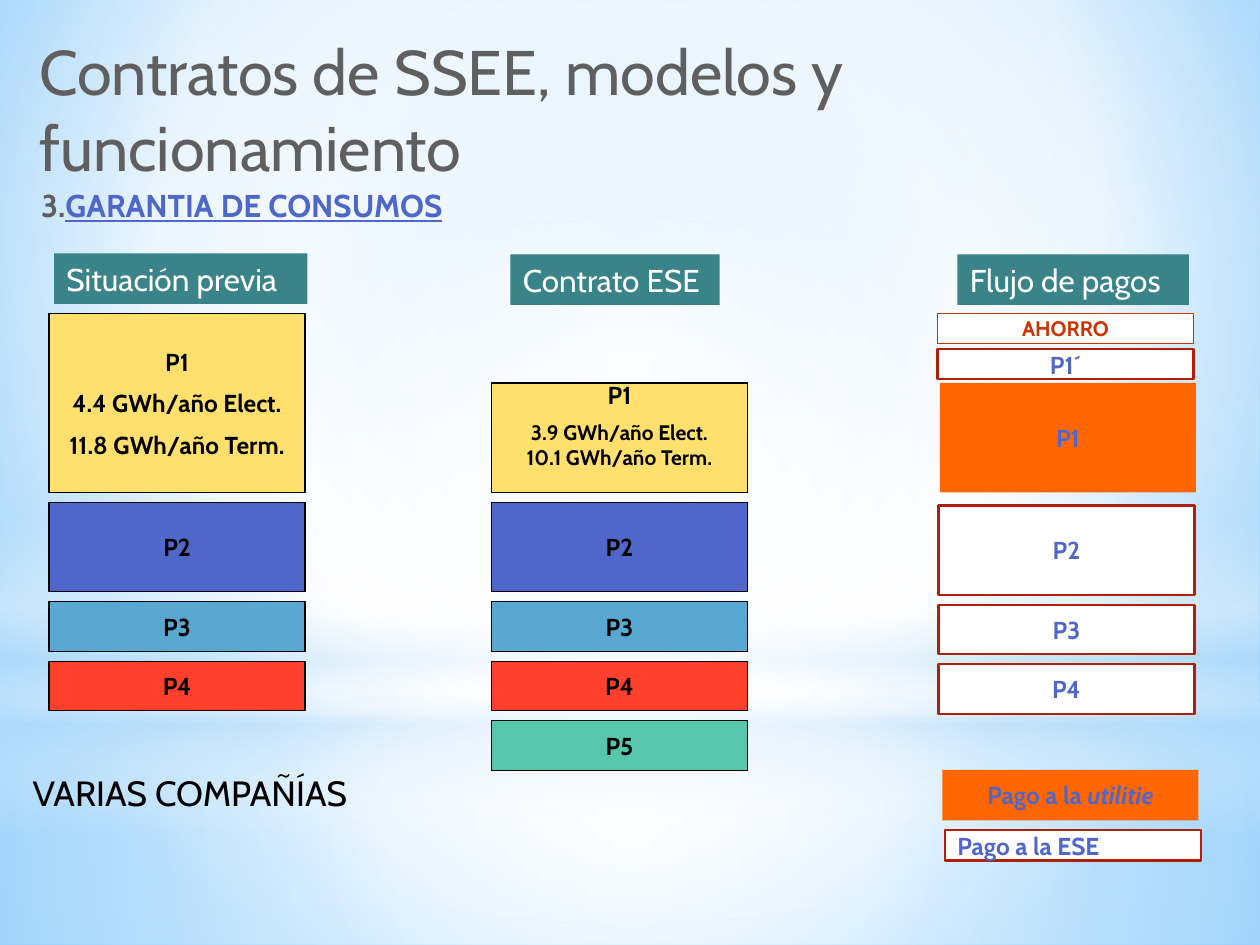
from dataclasses import dataclass
from typing import Optional

from lxml.etree import SubElement
from pptx import Presentation
from pptx.dml.color import RGBColor
from pptx.enum.shapes import MSO_SHAPE as Preset
from pptx.enum.text import MSO_ANCHOR as Anchor, MSO_AUTO_SIZE as AutoSize, PP_ALIGN as Align
from pptx.oxml.ns import qn
from pptx.util import Cm, Pt

FONT = "Cabin"
GAP = 0.2
BLOCK_WIDTH = 5.16
COLORS = {
    "black": "000000", "white": "FFFFFF", "grey": "5F5F5F", "teal": "398389",
    "yellow": "FFE06F", "blue": "4E67C8", "sky": "59A8D1", "red": "FF402A",
    "green": "56C7AA", "orange": "FF6600", "brick": "B01F07", "rust": "CC3300",
    "haze": "B4DCFA", "bg_light": "9ED5FF", "bg_deep": "5BB9FF",
}


@dataclass
class Style:
    fill: Optional[str] = None
    line: Optional[str] = None
    line_width: float = 0.75
    text: str = "black"
    size: int = 14
    bold: bool = True
    align: Align = Align.CENTER


@dataclass
class Block:
    lines: list[str]
    height: float
    style: Style


@dataclass
class Backdrop:
    preset: Preset
    top: float
    height: float
    stops: list[tuple[int, str, int]]
    angle: Optional[int] = None


def rgb(name: str) -> RGBColor:
    return RGBColor.from_string(COLORS[name])


def set_gradient(fill, stops, angle=None, focus=(50, 50, 50, 50)) -> None:
    """Fill with (position, colour, opacity) stops, linear if an angle is given, else circular."""
    fill.gradient()
    grad = fill._fill._gradFill
    for child in list(grad):
        grad.remove(child)
    stop_list = SubElement(grad, qn("a:gsLst"))
    for position, color, opacity in stops:
        stop = SubElement(stop_list, qn("a:gs"), pos=str(position * 1000))
        value = SubElement(stop, qn("a:srgbClr"), val=COLORS[color])
        if opacity < 100:
            SubElement(value, qn("a:alpha"), val=str(opacity * 1000))
    if angle is None:
        circle = SubElement(grad, qn("a:path"), path="circle")
        SubElement(circle, qn("a:fillToRect"),
                   **{side: str(share * 1000) for side, share in zip("ltrb", focus)})
    else:
        SubElement(grad, qn("a:lin"), ang=str(angle * 60000), scaled="0")


def add_backdrop(slide, backdrop: Backdrop) -> None:
    shape = slide.shapes.add_shape(backdrop.preset, 0, Cm(backdrop.top),
                                   Cm(25.4), Cm(backdrop.height))
    shape.shadow.inherit = False
    shape.line.fill.background()
    set_gradient(shape.fill, backdrop.stops, backdrop.angle)


def format_paragraph(paragraph, style: Style) -> None:
    paragraph.alignment = style.align
    font = paragraph.font
    font.name, font.size, font.bold = FONT, Pt(style.size), style.bold
    font.color.rgb = rgb(style.text)


def add_box(slide, left: float, top: float, width: float, height: float,
            lines: list[str], style: Style, anchor: Anchor = Anchor.MIDDLE):
    """Draw a rectangle with one paragraph per line and return its text frame."""
    shape = slide.shapes.add_shape(Preset.RECTANGLE, Cm(left), Cm(top), Cm(width), Cm(height))
    shape.shadow.inherit = False
    shape.fill.solid()
    shape.fill.fore_color.rgb = rgb(style.fill)
    if style.line:
        shape.line.color.rgb = rgb(style.line)
        shape.line.width = Pt(style.line_width)
    else:
        shape.line.fill.background()
    frame = shape.text_frame
    frame.word_wrap = False
    frame.vertical_anchor = anchor
    for index, line in enumerate(lines):
        paragraph = frame.add_paragraph() if index else frame.paragraphs[0]
        paragraph.add_run().text = line
        format_paragraph(paragraph, style)
        if index:
            paragraph.space_before = Pt(7)
    return frame


def add_stack(slide, left: float, top: float, blocks: list[Block]) -> list:
    """Stack blocks downwards with an equal gap and return their text frames."""
    frames = []
    for block in blocks:
        frames.append(add_box(slide, left, top, BLOCK_WIDTH, block.height,
                              block.lines, block.style))
        top += block.height + GAP
    return frames


def add_label(slide, left: float, top: float, width: float, style: Style, wrap: bool):
    frame = slide.shapes.add_textbox(Cm(left), Cm(top), Cm(width), Cm(1.1)).text_frame
    frame.word_wrap = wrap
    format_paragraph(frame.paragraphs[0], style)
    return frame.paragraphs[0]


def cost(fill: str) -> Style:
    return Style(fill, "black")


ESE = Style("white", "brick", 1.25, "blue")
UTILITY = Style("orange", text="blue")
SAVING = Style("white", "rust", text="rust", size=12)
HEADING = Style("teal", text="white", size=18, bold=False, align=Align.LEFT)

SHARED_COSTS = [Block(["P2"], 1.8, cost("blue")), Block(["P3"], 1, cost("sky")),
                Block(["P4"], 1, cost("red"))]
BEFORE = [Block(["P1", "4.4 GWh/año Elect.", "11.8 GWh/año Term."], 3.61, cost("yellow")),
          *SHARED_COSTS]
CONTRACT = [Block(["P1", "3.9 GWh/año Elect.", "10.1 GWh/año Term."], 2.21, cost("yellow")),
            *SHARED_COSTS, Block(["P5"], 1, cost("green"))]
ESE_PAYMENTS = [Block(block.lines, block.height, ESE) for block in SHARED_COSTS]

BACKDROPS = [
    Backdrop(Preset.RECTANGLE, 14.17, 4.88,
             [(0, "white", 91), (37, "white", 76), (100, "haze", 79)]),
    Backdrop(Preset.RECTANGLE, 0, 14.17,
             [(0, "white", 89), (48, "white", 62), (100, "haze", 79)]),
    Backdrop(Preset.RECTANGLE, 10.46, 6.35,
             [(0, "white", 0), (29, "white", 30), (45, "haze", 40), (55, "white", 26),
              (65, "haze", 60), (100, "white", 0)], angle=90),
    Backdrop(Preset.OVAL, 4.45, 14.17, [(0, "white", 100), (56, "white", 0)]),
]


def add_title(slide) -> None:
    title = slide.shapes.title
    title.left, title.top, title.width, title.height = Cm(0.69), Cm(0.56), Cm(23.75), Cm(2.18)
    frame = title.text_frame
    frame.text = "Contratos de SSEE, modelos y funcionamiento"
    frame.margin_left = frame.margin_right = frame.margin_top = frame.margin_bottom = Cm(0.1)
    frame.word_wrap, frame.auto_size = True, AutoSize.NONE
    frame.vertical_anchor = Anchor.TOP
    format_paragraph(frame.paragraphs[0],
                     Style(text="grey", size=36, bold=False, align=Align.LEFT))
    slide.shapes.element.append(title.element)  # in front of the backdrops


def main() -> None:
    deck = Presentation()
    deck.slide_width, deck.slide_height = Cm(25.4), Cm(19.05)
    slide = deck.slides.add_slide(deck.slide_layouts[5])
    set_gradient(slide.background.fill,
                 [(0, "bg_light", 100), (60, "white", 100), (100, "bg_deep", 100)],
                 focus=(20, 10, 20, 60))
    for backdrop in BACKDROPS:
        add_backdrop(slide, backdrop)
    add_title(slide)

    section = add_label(slide, 0.58, 3.63, 23.8,
                        Style(text="grey", size=18, align=Align.LEFT), wrap=True)
    section.add_run().text = "3."
    section_name = section.add_run()
    section_name.text = "GARANTIA DE CONSUMOS"
    section_name.font.underline = True
    section_name.font.color.rgb = rgb("blue")

    for heading, left, top, width in [("Situación previa", 1.09, 5.11, 5.11),
                                      ("Contrato ESE", 10.29, 5.13, 4.22),
                                      ("Flujo de pagos", 19.3, 5.13, 4.67)]:
        add_box(slide, left, top, width, 1.02, [heading], HEADING, Anchor.TOP)

    add_stack(slide, 0.99, 6.32, BEFORE)
    contract_energy = add_stack(slide, 9.91, 7.72, CONTRACT)[0]
    contract_energy.margin_bottom = Cm(0.64)
    for consumption in contract_energy.paragraphs[1:]:
        consumption.font.size = Pt(12)
        consumption.space_before = Pt(0)
    contract_energy.paragraphs[1].line_spacing = 1.4

    add_stack(slide, 18.92, 10.19, ESE_PAYMENTS)
    add_box(slide, 18.9, 7.04, BLOCK_WIDTH, 0.61, ["P1´"], ESE)
    add_box(slide, 18.95, 7.72, BLOCK_WIDTH, 2.21, ["P1"], UTILITY)
    add_box(slide, 18.9, 6.32, BLOCK_WIDTH, 0.61, ["AHORRO"], SAVING)

    utility_key = add_box(slide, 19, 15.52, BLOCK_WIDTH, 1.02, ["Pago a la "], UTILITY)
    foreign_word = utility_key.paragraphs[0].add_run()
    foreign_word.text = "utilitie"
    foreign_word.font.italic = True
    ese_key = add_box(slide, 19.05, 16.74, BLOCK_WIDTH, 0.61, ["Pago a la ESE"], ESE)
    ese_key.paragraphs[0].alignment = Align.LEFT

    companies = add_label(slide, 0.25, 15.42, 7.16, Style(size=20, bold=False), wrap=False)
    companies.add_run().text = "VARIAS COMPAÑÍAS"
    deck.save("out.pptx")


if __name__ == "__main__":
    main()
